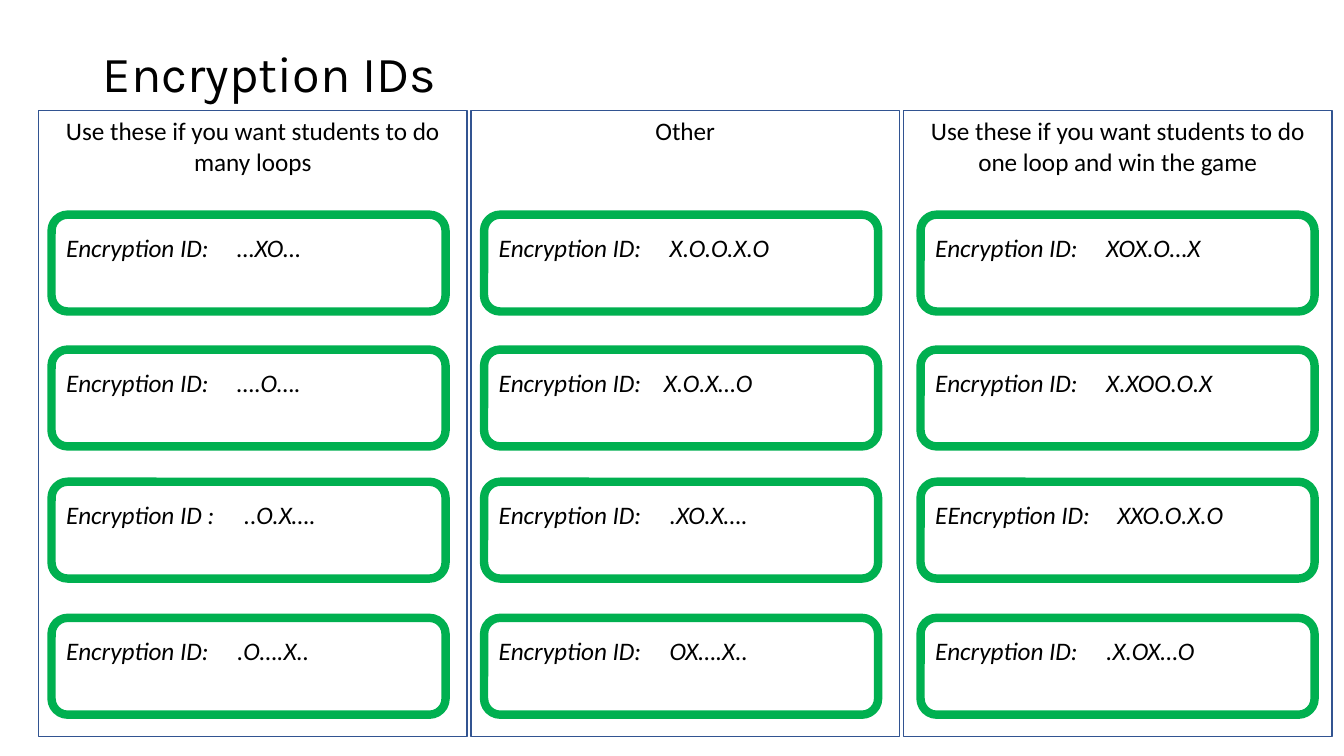
from dataclasses import dataclass

from lxml.etree import SubElement
from pptx import Presentation
from pptx.dml.color import RGBColor
from pptx.enum.shapes import MSO_SHAPE as Shape
from pptx.enum.text import MSO_ANCHOR as Anchor, MSO_AUTO_SIZE as AutoSize, PP_ALIGN as Align
from pptx.oxml.ns import qn
from pptx.util import Cm, Pt


@dataclass(frozen=True)
class Theme:
    text: RGBColor = RGBColor(0x00, 0x00, 0x00)
    paper: RGBColor = RGBColor(0xFF, 0xFF, 0xFF)
    card_line: RGBColor = RGBColor(0x00, 0xB0, 0x50)
    column_line: RGBColor = RGBColor(0x32, 0x54, 0x91)
    title_font: str = "Karla"
    body_font: str = "Calibri"
    title_size: Pt = Pt(36)
    body_size: Pt = Pt(18)


THEME = Theme()
LABEL = "Encryption ID:"
CODE_INDENT = 4.31
CARD_TOPS = (2.62, 6.02, 9.35, 12.78)
CARD_WIDTH, CARD_HEIGHT = 9.93, 2.44
COLUMN_LEFT, COLUMN_TOP, COLUMN_PITCH = 0.97, 2.79, 10.9
COLUMN_WIDTH, COLUMN_HEIGHT = 10.8, 15.77

# Each column: heading, card inset, cards as (label, code, code indent).
COLUMNS = (
    ("Use these if you want students to do many loops", 0.33, (
        (LABEL, "…XO…", CODE_INDENT),
        (LABEL, "….O….", CODE_INDENT),
        ("Encryption ID :", "..O.X….", 4.48),
        (LABEL, ".O….X..", CODE_INDENT),
    )),
    ("Other", 0.33, (
        (LABEL, "X.O.O.X.O", CODE_INDENT),
        (LABEL, "X.O.X…O", 4.16),
        (LABEL, ".XO.X….", CODE_INDENT),
        (LABEL, "OX….X..", CODE_INDENT),
    )),
    ("Use these if you want students to do one loop and win the game", 0.43, (
        (LABEL, "XOX.O…X", CODE_INDENT),
        (LABEL, "X.XOO.O.X", CODE_INDENT),
        ("EEncryption ID:", "XXO.O.X.O", 4.59),
        (LABEL, ".X.OX…O", CODE_INDENT),
    )),
)


def style_font(font, name, size, italic=False):
    font.name = name
    font.size = size
    font.italic = italic
    font.color.rgb = THEME.text


def add_box(slide, kind, left, top, width, height, line_color, line_width):
    """Add an outlined, shadowless shape with text starting at its top."""
    box = slide.shapes.add_shape(kind, Cm(left), Cm(top), Cm(width), Cm(height))
    box.shadow.inherit = False
    box.line.color.rgb = line_color
    box.line.width = line_width
    box.text_frame.word_wrap = True
    box.text_frame.vertical_anchor = Anchor.TOP
    return box


def add_tab_stop(paragraph, position):
    tab_list = SubElement(paragraph._p.get_or_add_pPr(), qn("a:tabLst"))
    SubElement(tab_list, qn("a:tab"), pos=str(Cm(position)), algn="l")


def add_title(slide, left, top, width, height):
    title = slide.shapes.title
    title.left, title.top, title.width, title.height = map(Cm, (left, top, width, height))
    frame = title.text_frame
    frame.auto_size = AutoSize.NONE
    frame.vertical_anchor = Anchor.MIDDLE
    frame.text = "Encryption IDs"
    paragraph = frame.paragraphs[0]
    paragraph.alignment = Align.LEFT
    paragraph.line_spacing = 0.9
    style_font(paragraph.font, THEME.title_font, THEME.title_size)


def add_card(slide, left, top, label, code, code_indent):
    card = add_box(slide, Shape.ROUNDED_RECTANGLE, left, top, CARD_WIDTH, CARD_HEIGHT,
                   THEME.card_line, Pt(6))
    card.fill.solid()
    card.fill.fore_color.rgb = THEME.paper
    frame = card.text_frame
    frame.margin_top = Cm(0.33)
    frame.text = f"{label}\t{code}"
    paragraph = frame.paragraphs[0]
    paragraph.alignment = Align.LEFT
    add_tab_stop(paragraph, code_indent)
    style_font(paragraph.font, THEME.body_font, THEME.body_size, italic=True)


def add_column(slide, left, top, width, height, heading, card_inset, cards):
    column = add_box(slide, Shape.RECTANGLE, left, top, width, height,
                     THEME.column_line, Pt(1))
    column.fill.background()
    column.text_frame.text = heading
    paragraph = column.text_frame.paragraphs[0]
    paragraph.alignment = Align.CENTER
    style_font(paragraph.font, THEME.body_font, THEME.body_size)
    for card_top, card in zip(CARD_TOPS, cards):
        add_card(slide, left + card_inset, top + card_top, *card)


def main():
    presentation = Presentation()
    presentation.slide_width, presentation.slide_height = Cm(33.87), Cm(19.05)
    slide = presentation.slides.add_slide(presentation.slide_layouts.get_by_name("Title Only"))
    add_title(slide, 2.34, 1.02, 29.21, 1.78)
    for index, column in enumerate(COLUMNS):
        add_column(slide, COLUMN_LEFT + index * COLUMN_PITCH, COLUMN_TOP,
                   COLUMN_WIDTH, COLUMN_HEIGHT, *column)
    presentation.save("out.pptx")


if __name__ == "__main__":
    main()
